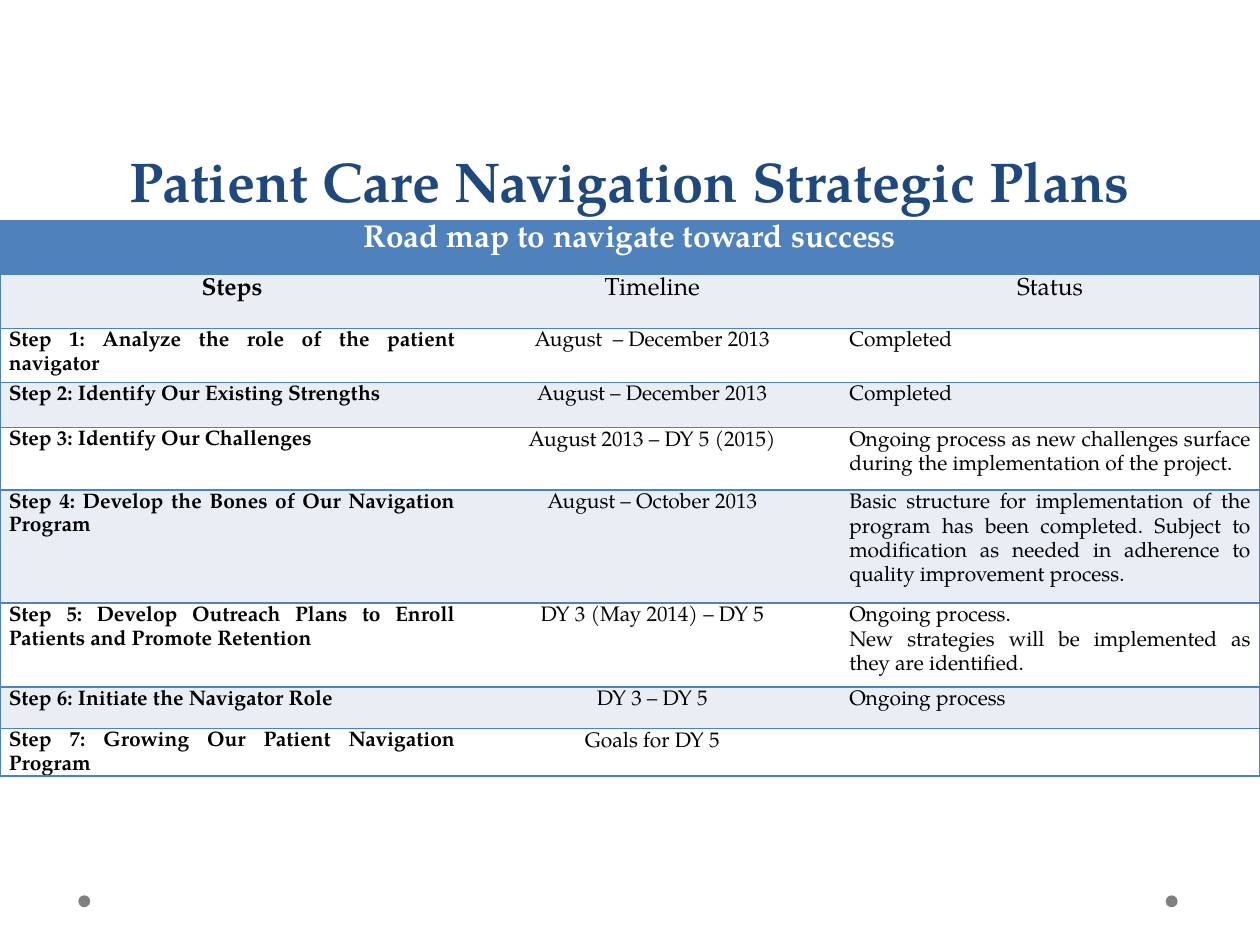
"""Build the patient care navigation strategic plan slide."""
from dataclasses import dataclass

from lxml import etree
from pptx import Presentation
from pptx.dml.color import RGBColor
from pptx.enum import shapes, text
from pptx.oxml import ns
from pptx.util import Cm, Pt

FONT = "TeX Gyre Pagella"
BLUE, NAVY, PALE, WHITE, BLACK, GRAY = (
    "4F81BD", "1F497D", "E9EDF4", "FFFFFF", "000000", "808080")
CENTER, JUSTIFY = text.PP_ALIGN.CENTER, text.PP_ALIGN.JUSTIFY
COLUMN_WIDTHS = (9.36, 7.58, 8.46)


@dataclass(frozen=True)
class Row:
    height: float
    cells: tuple[str, str, str]
    size: int = 12
    alignments: tuple = (JUSTIFY, CENTER, JUSTIFY)
    fill: str = WHITE
    color: str = BLACK


ROWS = (
    Row(1.09, ("Road map to navigate toward success", "", ""), 18,
        (CENTER,) * 3, BLUE, WHITE),
    Row(1.09, ("Steps", "Timeline", "Status"), 14, (CENTER,) * 3, PALE),
    Row(1.09, ("Step 1: Analyze the role of the patient navigator",
               "August  – December 2013", "Completed")),
    Row(0.91, ("Step 2: Identify Our Existing Strengths",
               "August – December 2013", "Completed"), fill=PALE),
    Row(1.26, ("Step 3: Identify Our Challenges", "August 2013 – DY 5 (2015)",
               "Ongoing process as new challenges surface during the "
               "implementation of the project.")),
    Row(2.28, ("Step 4: Develop the Bones of Our Navigation Program",
               "August – October 2013",
               "Basic structure for implementation of the program has been "
               "completed. Subject to modification as needed in adherence to "
               "quality improvement process."), fill=PALE),
    Row(1.69, ("Step 5: Develop Outreach Plans to Enroll Patients and Promote "
               "Retention", "DY 3 (May 2014) – DY 5",
               "Ongoing process.\nNew strategies will be implemented as they "
               "are identified.")),
    Row(0.84, ("Step 6: Initiate the Navigator Role", "DY 3 – DY 5",
               "Ongoing process"), fill=PALE),
    Row(0.82, ("Step 7: Growing Our Patient Navigation Program",
               "Goals for DY 5", "")),
)


def rgb(value: str) -> RGBColor:
    return RGBColor.from_string(value)


def style_font(paragraph, size: int, color: str, bold: bool) -> None:
    font = paragraph.font
    font.name, font.size, font.bold = FONT, Pt(size), bold
    font.color.rgb = rgb(color)


def set_borders(cell, visible: str) -> None:
    properties = cell._tc.get_or_add_tcPr()
    for side in "LRTB":
        line = etree.SubElement(properties, ns.qn(f"a:ln{side}"), w=str(Pt(1)))
        if side in visible:
            fill = etree.SubElement(line, ns.qn("a:solidFill"))
            etree.SubElement(fill, ns.qn("a:srgbClr"), val=BLUE)
        else:
            etree.SubElement(line, ns.qn("a:noFill"))


def fill_cell(cell, row: Row, column: int) -> None:
    set_borders(cell, ("LTB", "TB", "RTB")[column])
    cell.fill.solid()
    cell.fill.fore_color.rgb = rgb(row.fill)
    cell.margin_left = cell.margin_right = Cm(0.18)
    cell.margin_top = cell.margin_bottom = 0
    cell.text = row.cells[column]
    for paragraph in cell.text_frame.paragraphs:
        paragraph.alignment = row.alignments[column]
        paragraph.line_spacing = 1.15
        style_font(paragraph, row.size, row.color, column == 0)


def add_plan_table(slide) -> None:
    frame = slide.shapes.add_table(
        len(ROWS), len(COLUMN_WIDTHS), 0, Cm(4.44), Cm(sum(COLUMN_WIDTHS)),
        Cm(sum(row.height for row in ROWS)))
    table = frame.table
    table.first_row = table.horz_banding = False
    for column, width in zip(table.columns, COLUMN_WIDTHS):
        column.width = Cm(width)
    for index, row in enumerate(ROWS):
        table.rows[index].height = Cm(row.height)
        for column in range(len(COLUMN_WIDTHS)):
            fill_cell(table.cell(index, column), row, column)
    table.cell(0, 0).merge(table.cell(0, len(COLUMN_WIDTHS) - 1))


def add_dot(slide, left: float) -> None:
    dot = slide.shapes.add_shape(
        shapes.MSO_SHAPE.OVAL, Cm(left), Cm(18.05), Cm(0.24), Cm(0.24))
    dot.shadow.inherit = False
    dot.fill.solid()
    dot.fill.fore_color.rgb = rgb(GRAY)
    dot.line.fill.background()


def set_title(slide) -> None:
    title = slide.shapes.title
    title.left, title.top, title.width, title.height = (
        Cm(1.27), 0, Cm(22.86), Cm(4.44))
    frame = title.text_frame
    frame.text = "Patient Care Navigation Strategic Plans"
    frame.vertical_anchor = text.MSO_ANCHOR.BOTTOM
    paragraph = frame.paragraphs[0]
    paragraph.alignment = CENTER
    paragraph.line_spacing = Pt(58)
    style_font(paragraph, 32, NAVY, True)


def main() -> None:
    presentation = Presentation()
    presentation.slide_width, presentation.slide_height = Cm(25.4), Cm(19.05)
    slide = presentation.slides.add_slide(presentation.slide_layouts[5])
    for left in (23.5, 1.58):
        add_dot(slide, left)
    set_title(slide)
    add_plan_table(slide)
    presentation.save("out.pptx")


if __name__ == "__main__":
    main()
